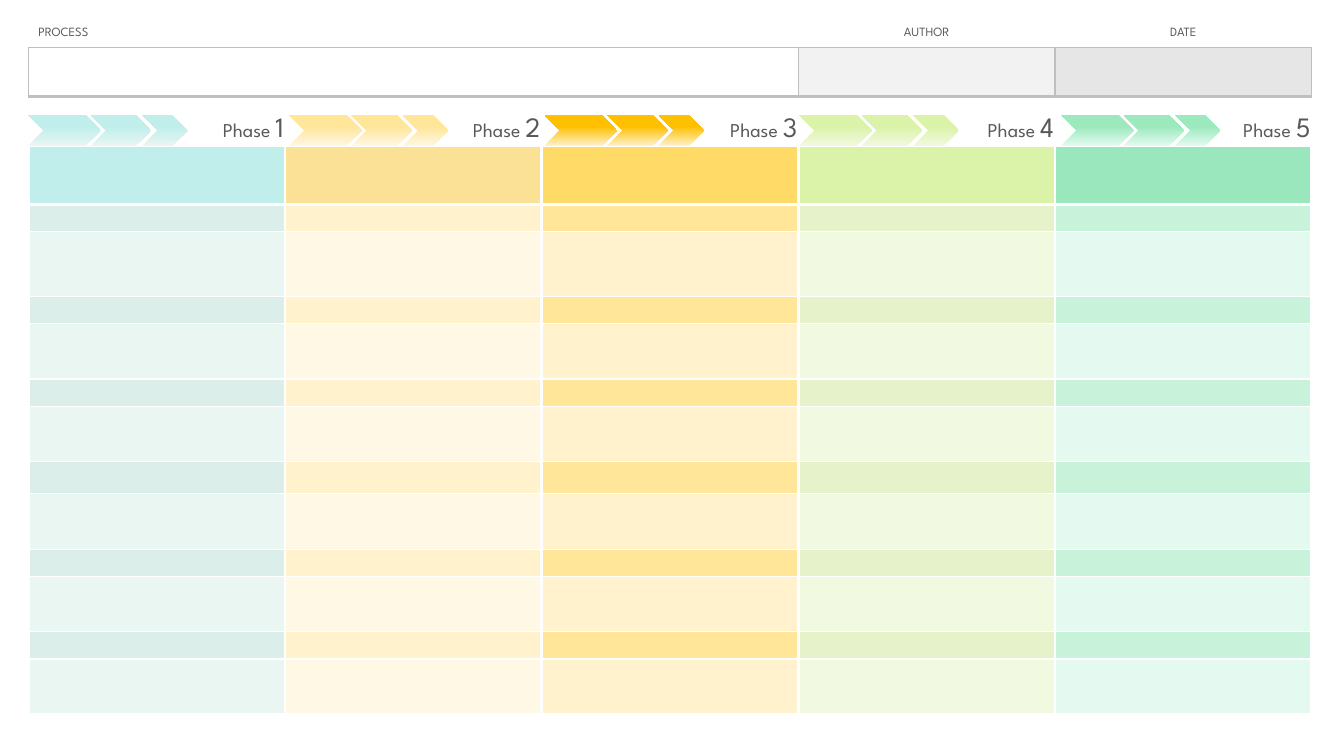
from dataclasses import dataclass
from lxml import etree
from pptx import Presentation
from pptx.dml.color import RGBColor
from pptx.enum.shapes import MSO_SHAPE
from pptx.enum.text import MSO_ANCHOR, PP_ALIGN
from pptx.oxml.ns import qn
from pptx.util import Inches, Pt

CHEVRON = MSO_SHAPE.CHEVRON
MIDDLE, BOTTOM = MSO_ANCHOR.MIDDLE, MSO_ANCHOR.BOTTOM
LEFT, CENTER, RIGHT = PP_ALIGN.LEFT, PP_ALIGN.CENTER, PP_ALIGN.RIGHT


@dataclass(frozen=True)
class Theme:
    font: str = "League Spartan"
    text: str = "595959"
    rule: str = "BFBFBF"
    gap: str = "FFFFFF"
    label_size: int = 9
    phase_size: int = 14
    number_size: int = 20
    empty_size: int = 8
    thin: float = 1
    thick: float = 2.25
    inset: float = 0.01


@dataclass(frozen=True)
class Box:
    left: float
    top: float
    width: float
    height: float


@dataclass(frozen=True)
class Phase:
    title_fill: str
    band_fill: str
    body_fill: str
    arrow_light: str
    arrow_full: str
    arrow_offset: float


THEME = Theme()
PHASES = [
    Phase("BFEEEB", "DBEEE9", "E9F6F2", "E9F6F2", "BFEEEB", 0),
    Phase("FAE196", "FFF2CC", "FFF8E5", "FFF7E5", "FFE699", 0.04),
    Phase("FFDA66", "FFE699", "FFF2CC", "FFF2CC", "FFC000", 0.03),
    Phase("DBF2A9", "E5F2CA", "F2F9E1", "F2F9E0", "DBF2A9", 0.01),
    Phase("9AE7BD", "C9F2DB", "E4FAF1", "E4FAF0", "9CE9BE", 0.06),
]
HEADER_COLUMNS = [("PROCESS", LEFT, 0.6, "FFFFFF"),
                  ("AUTHOR", CENTER, 0.2, "F2F2F2"),
                  ("DATE", CENTER, 0.2, "E6E6E6")]
HEADER_ROWS = [0.28, 0.49]
PHASE_ROWS = [0.3, 0.59, 0.27, 0.64, 0.27, 0.55, 0.27, 0.55,
              0.32, 0.55, 0.27, 0.55, 0.27, 0.55]
ARROWS = [(0, 0.72), (0.62, 0.6), (1.13, 0.45)]
ARROW_HEIGHT = 0.31


def add_grid(slide, box, widths, heights):
    grid = slide.shapes.add_table(
        len(heights), len(widths), Inches(box.left), Inches(box.top),
        Inches(box.width), Inches(box.height)).table
    grid.first_row = grid.horz_banding = False
    for column, width in zip(grid.columns, widths):
        column.width = Inches(width)
    for row, height in zip(grid.rows, heights):
        row.height = Inches(height)
    return grid


def style_cell(cell, fill, color, borders):
    cell.margin_left = cell.margin_right = Inches(THEME.inset)
    cell.margin_top = cell.margin_bottom = Inches(THEME.inset)
    properties = cell._tc.get_or_add_tcPr()
    for side in "LRTB":
        if side in borders:
            line = etree.SubElement(properties, qn(f"a:ln{side}"),
                                    w=str(Pt(borders[side])))
            solid = etree.SubElement(line, qn("a:solidFill"))
            etree.SubElement(solid, qn("a:srgbClr"), val=color)
    if fill:
        cell.fill.solid()
        cell.fill.fore_color.rgb = RGBColor.from_string(fill)
    else:
        cell.fill.background()


def shrink_empty(cell):
    etree.SubElement(cell.text_frame.paragraphs[0]._p, qn("a:endParaRPr"),
                     sz=str(THEME.empty_size * 100))


def write_cell(cell, parts, align, anchor):
    cell.vertical_anchor = anchor
    paragraph = cell.text_frame.paragraphs[0]
    paragraph.alignment = align
    paragraph.font.name = THEME.font
    paragraph.font.color.rgb = RGBColor.from_string(THEME.text)
    for text, size in parts:
        run = paragraph.add_run()
        run.text = text
        run.font.size = Pt(size)


def add_header(slide, box):
    widths = [box.width * share for _, _, share, _ in HEADER_COLUMNS]
    grid = add_grid(slide, box, widths, HEADER_ROWS)
    for column, (label, align, _, fill) in enumerate(HEADER_COLUMNS):
        caption, entry = grid.cell(0, column), grid.cell(1, column)
        style_cell(caption, None, THEME.rule, {"B": THEME.thin})
        write_cell(caption, [(label, THEME.label_size)], align, MIDDLE)
        if align == LEFT:
            caption.margin_left = Inches(0.1)
        style_cell(entry, fill, THEME.rule,
                   {**dict.fromkeys("LRT", THEME.thin), "B": THEME.thick})
        shrink_empty(entry)


def row_borders(row):
    side = THEME.thin if row == 0 else THEME.thick
    top = THEME.thick if row in (1, 2) else THEME.thin
    bottom = THEME.thick if row in (0, 1, len(PHASE_ROWS) - 1) else THEME.thin
    return {"L": side, "R": side, "T": top, "B": bottom}


def add_arrows(slide, phase, left, top):
    for offset, width in ARROWS:
        arrow = slide.shapes.add_shape(
            CHEVRON, Inches(left + offset), Inches(top),
            Inches(width), Inches(ARROW_HEIGHT))
        arrow.shadow.inherit = False
        arrow.line.fill.background()
        arrow.fill.gradient()
        arrow.fill.gradient_angle = 90
        light, full = arrow.fill.gradient_stops
        light.color.rgb = RGBColor.from_string(phase.arrow_light)
        light.position = 0
        full.color.rgb = RGBColor.from_string(phase.arrow_full)
        full.position = 0.63


def add_phases(slide, box):
    column_width = box.width / len(PHASES)
    grid = add_grid(slide, box, [column_width] * len(PHASES), PHASE_ROWS)
    for column, phase in enumerate(PHASES):
        bands = (len(PHASE_ROWS) - 2) // 2
        fills = [None, phase.title_fill] + [phase.band_fill, phase.body_fill] * bands
        for row, fill in enumerate(fills):
            cell = grid.cell(row, column)
            style_cell(cell, fill, THEME.gap, row_borders(row))
            if row:
                shrink_empty(cell)
        write_cell(grid.cell(0, column),
                   [("Phase ", THEME.phase_size), (str(column + 1), THEME.number_size)],
                   RIGHT, BOTTOM)
        add_arrows(slide, phase,
                   box.left + column * column_width + phase.arrow_offset, box.top)


def main():
    deck = Presentation()
    deck.slide_width, deck.slide_height = Inches(13.33), Inches(7.5)
    slide = deck.slides.add_slide(deck.slide_layouts[6])
    add_header(slide, Box(0.28, 0.19, 12.73, sum(HEADER_ROWS)))
    add_phases(slide, Box(0.28, 1.14, 12.73, sum(PHASE_ROWS)))
    deck.save("out.pptx")


if __name__ == "__main__":
    main()
